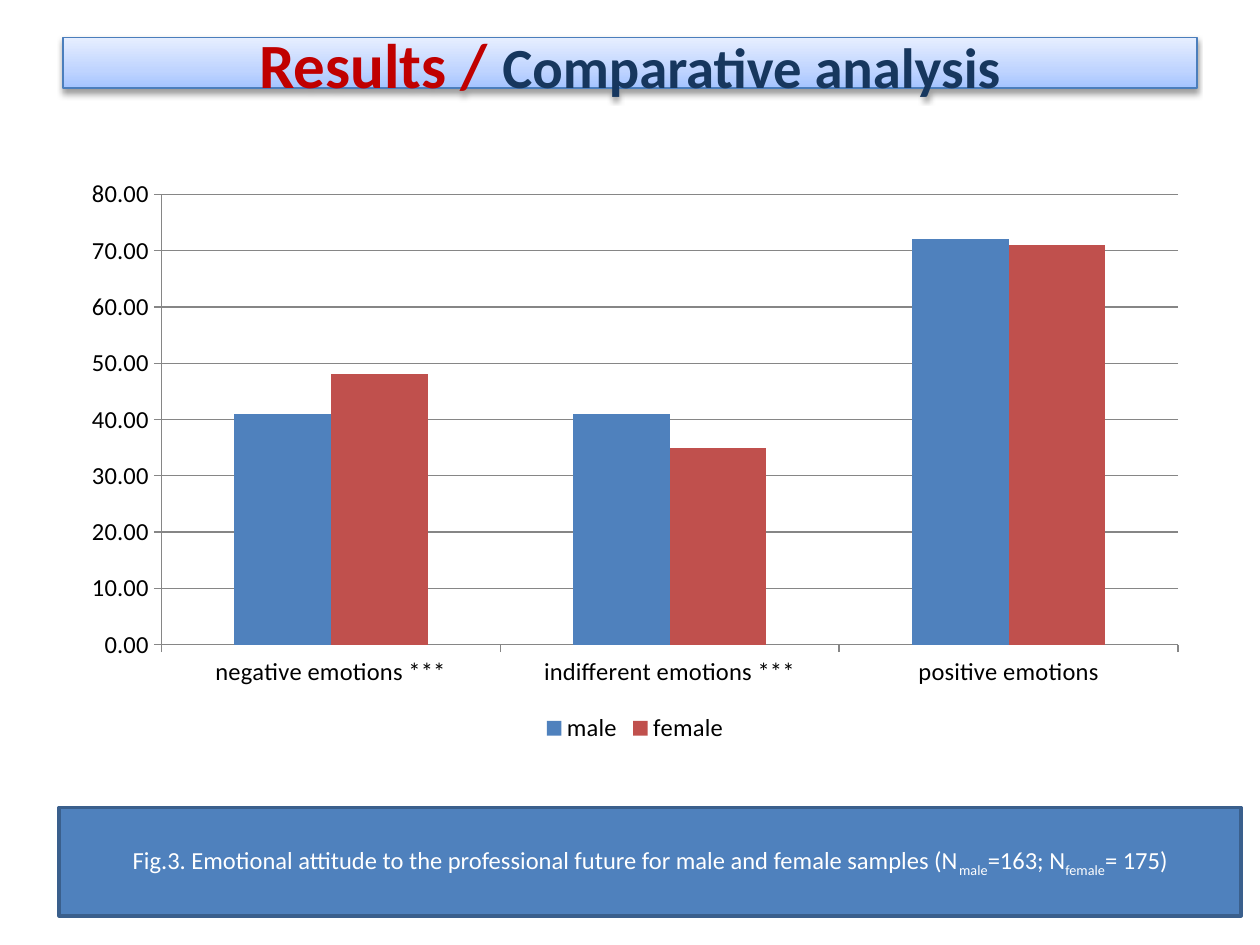
from copy import deepcopy

from lxml.etree import SubElement
from pptx import Presentation
from pptx.chart.data import CategoryChartData
from pptx.dml.color import RGBColor
from pptx.enum.chart import XL_CHART_TYPE, XL_LEGEND_POSITION, XL_TICK_MARK
from pptx.enum.shapes import MSO_SHAPE
from pptx.enum.text import MSO_ANCHOR, PP_ALIGN
from pptx.oxml.ns import qn
from pptx.util import Inches, Pt

FONT = "Calibri"
BLACK = RGBColor(0x00, 0x00, 0x00)
WHITE = RGBColor(0xFF, 0xFF, 0xFF)
RED = RGBColor(0xC0, 0x00, 0x00)
NAVY = RGBColor(0x17, 0x37, 0x5E)
BLUE = RGBColor(0x4F, 0x81, 0xBD)
BRICK = RGBColor(0xC0, 0x50, 0x4D)
TITLE_LINE = RGBColor(0x4B, 0x7E, 0xBC)
CAPTION_LINE = RGBColor(0x3A, 0x5F, 0x8C)
GRID = RGBColor(0x86, 0x86, 0x86)

# Content: (text, size, colour, bold, baseline in percent)
TITLE = [
    ("Results / ", 36, RED, True, 0),
    ("Comparative analysis", 32.4, NAVY, True, 0),
]
CAPTION = [
    (text, 14, WHITE, False, baseline)
    for text, baseline in [
        ("Fig.3. Emotional attitude to the professional future "
         "for male and female samples (N", 0),
        ("male", -25),
        ("=163; N", 0),
        ("female", -25),
        ("= 175)", 0),
    ]
]
TITLE_GRADIENT = [
    (0, RGBColor(0xA4, 0xC4, 0xFF)),
    (0.35, RGBColor(0xBF, 0xD4, 0xFF)),
    (1, RGBColor(0xE6, 0xEE, 0xFF)),
]
EMOTIONS = ["negative emotions ***", "indifferent emotions ***", "positive emotions"]
SAMPLES = [
    ("male", (41, 41, 72), BLUE),
    ("female", (48, 35, 71), BRICK),
]


def add_banner(slide, box, runs, line_color, line_width):
    """Add a rectangle with one centred line of mixed text."""
    banner = slide.shapes.add_shape(MSO_SHAPE.RECTANGLE, *map(Inches, box))
    banner.shadow.inherit = False
    banner.line.color.rgb = line_color
    banner.line.width = Pt(line_width)
    frame = banner.text_frame
    frame.word_wrap = True
    frame.vertical_anchor = MSO_ANCHOR.MIDDLE
    paragraph = frame.paragraphs[0]
    paragraph.alignment = PP_ALIGN.CENTER
    for text, size, color, bold, baseline in runs:
        run = paragraph.add_run()
        run.text = text
        run.font.name = FONT
        run.font.size = Pt(size)
        run.font.bold = bold
        run.font.color.rgb = color
        if baseline:
            run.font._element.set("baseline", str(baseline * 1000))
    return banner


def fill_gradient(banner, stops):
    banner.fill.gradient()
    banner.fill.gradient_angle = 90
    stop_list = banner._element.spPr.find(qn("a:gradFill")).find(qn("a:gsLst"))
    stop_list.append(deepcopy(stop_list[-1]))
    for stop, (position, color) in zip(banner.fill.gradient_stops, stops):
        stop.position = position
        stop.color.rgb = color


def add_shadow(banner):
    effects = banner._element.spPr.find(qn("a:effectLst"))
    shadow = SubElement(effects, qn("a:outerShdw"), blurRad=str(Pt(3.1)),
                        dist=str(Pt(1.6)), dir="5400000", rotWithShape="0")
    color = SubElement(shadow, qn("a:srgbClr"), val=str(BLACK))
    SubElement(color, qn("a:alpha"), val="38000")


def add_emotion_chart(slide, box):
    data = CategoryChartData(number_format="###0.00")
    data.categories = EMOTIONS
    for name, values, _ in SAMPLES:
        data.add_series(name, values)
    chart = slide.shapes.add_chart(
        XL_CHART_TYPE.COLUMN_CLUSTERED, *map(Inches, box), data).chart
    chart.has_title = False
    chart.font.name = FONT
    chart.font.size = Pt(14)
    chart.font.color.rgb = BLACK
    chart.has_legend = True
    chart.legend.position = XL_LEGEND_POSITION.BOTTOM
    chart.legend.include_in_layout = False

    plot = chart.plots[0]
    plot.vary_by_categories = False
    plot.gap_width = 150
    plot.overlap = 0
    for series, (_, _, color) in zip(plot.series, SAMPLES):
        series.invert_if_negative = False
        series.format.fill.solid()
        series.format.fill.fore_color.rgb = color

    values_axis = chart.value_axis
    values_axis.minimum_scale, values_axis.maximum_scale = 0, 80
    values_axis.major_unit = 10
    values_axis.has_major_gridlines = True
    values_axis.tick_labels.number_format = "###0.00"
    values_axis.tick_labels.number_format_is_linked = False
    for axis in (values_axis, chart.category_axis):
        axis.major_tick_mark = XL_TICK_MARK.OUTSIDE
    for part in (values_axis, chart.category_axis, values_axis.major_gridlines):
        part.format.line.color.rgb = GRID
        part.format.line.width = Pt(0.75)


def main():
    prs = Presentation()
    prs.slide_width, prs.slide_height = Inches(10), Inches(7.5)
    slide = prs.slides.add_slide(prs.slide_layouts[6])

    # Title banner
    title = add_banner(slide, (0.5, 0.3, 9, 0.4), TITLE, TITLE_LINE, 0.75)
    fill_gradient(title, TITLE_GRADIENT)
    add_shadow(title)

    # Figure caption
    caption = add_banner(slide, (0.47, 6.41, 9.38, 0.86), CAPTION, CAPTION_LINE, 2)
    caption.fill.solid()
    caption.fill.fore_color.rgb = BLUE

    # Emotions by sample
    add_emotion_chart(slide, (0.55, 1.33, 8.98, 4.61))

    prs.save("out.pptx")


if __name__ == "__main__":
    main()
